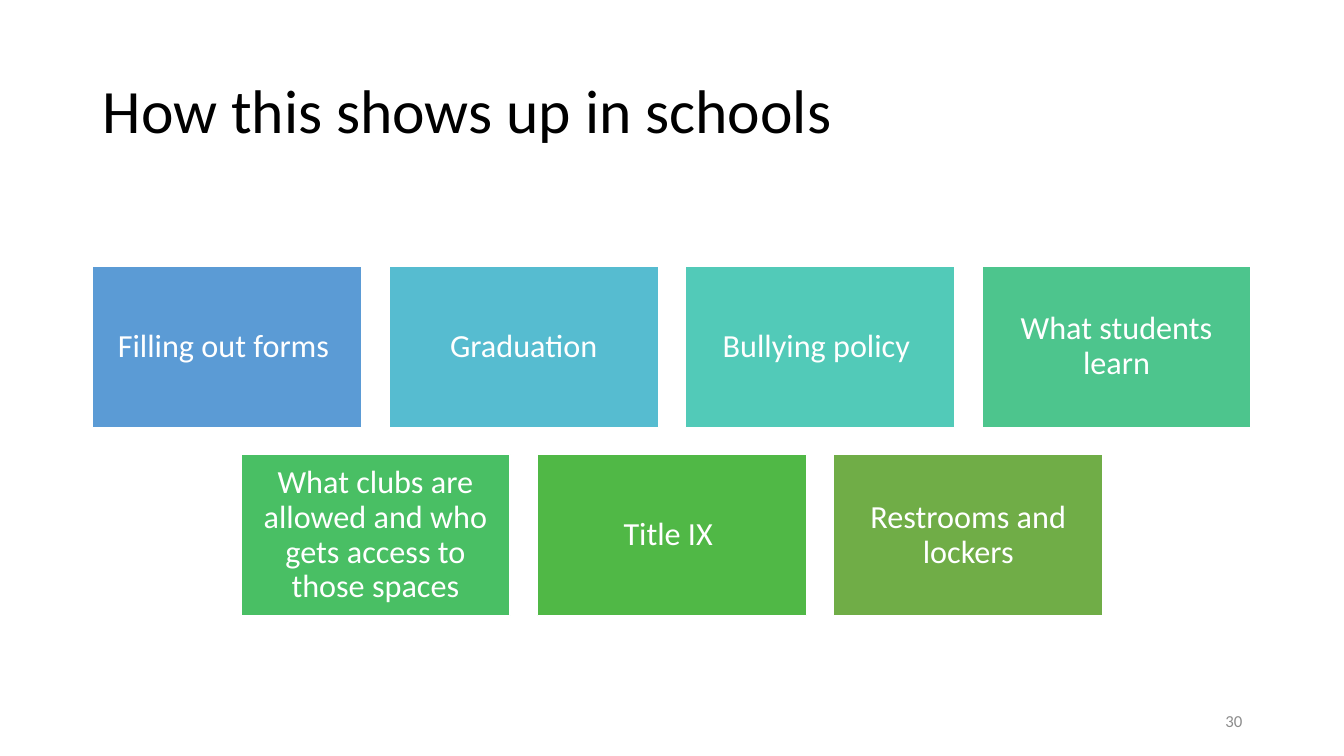
"""Build a slide with seven coloured tiles on where the topic shows up in schools."""
from dataclasses import dataclass

from pptx import Presentation
from pptx.dml.color import RGBColor
from pptx.enum.shapes import MSO_SHAPE
from pptx.enum.text import MSO_ANCHOR, PP_ALIGN
from pptx.util import Pt

RECTANGLE = MSO_SHAPE.RECTANGLE
MIDDLE = MSO_ANCHOR.MIDDLE
LEFT, CENTER, RIGHT = PP_ALIGN.LEFT, PP_ALIGN.CENTER, PP_ALIGN.RIGHT

TITLE = "How this shows up in schools"
PAGE_NUMBER = "30"
TILE_ROWS = [
    [
        ("Filling out forms ", "5B9BD5"),
        ("Graduation", "56BCD0"),
        ("Bullying policy ", "52CAB8"),
        ("What students learn", "4DC58D"),
    ],
    [
        ("What clubs are allowed and who gets access to those spaces", "49BF64"),
        ("Title IX ", "50B846"),
        ("Restrooms and lockers", "70AD47"),
    ],
]


@dataclass(frozen=True)
class Theme:
    font: str = "Calibri"
    title_color: str = "000000"
    tile_text_color: str = "FFFFFF"
    tile_line_color: str = "FFFFFF"
    number_color: str = "8C8C8C"
    title_size: int = 44
    tile_size: int = 23
    number_size: int = 12
    tile_line_width: int = 1
    line_spacing: float = 0.9


THEME = Theme()
EMU_PER_PX = 9144
SLIDE_WIDTH, SLIDE_HEIGHT = 1333, 750
TITLE_BOX = (92, 40, 1150, 145)
NUMBER_BOX = (942, 695, 300, 40)
TILE_WIDTH, TILE_HEIGHT, TILE_GAP = 267, 160, 27
TILES_TOP = 264
TILE_INSET = 10


def emu(*lengths):
    return [round(length * EMU_PER_PX) for length in lengths]


def write_text(shape, text, size, color, alignment, line_spacing=1.0):
    text_frame = shape.text_frame
    text_frame.text = text
    text_frame.word_wrap = True
    text_frame.vertical_anchor = MIDDLE
    paragraph = text_frame.paragraphs[0]
    paragraph.alignment = alignment
    paragraph.line_spacing = line_spacing
    font = paragraph.runs[0].font
    font.name = THEME.font
    font.size = Pt(size)
    font.color.rgb = RGBColor.from_string(color)


def add_tile(slide, left, top, text, color):
    box = emu(left, top, TILE_WIDTH, TILE_HEIGHT)
    tile = slide.shapes.add_shape(RECTANGLE, *box)
    tile.shadow.inherit = False
    tile.fill.solid()
    tile.fill.fore_color.rgb = RGBColor.from_string(color)
    tile.line.color.rgb = RGBColor.from_string(THEME.tile_line_color)
    tile.line.width = Pt(THEME.tile_line_width)
    write_text(tile, text, THEME.tile_size, THEME.tile_text_color, CENTER, THEME.line_spacing)
    text_frame = tile.text_frame
    inset = emu(TILE_INSET)[0]
    text_frame.margin_left = text_frame.margin_right = inset
    text_frame.margin_top = text_frame.margin_bottom = inset


def add_tiles(slide):
    for row_index, row in enumerate(TILE_ROWS):
        row_width = len(row) * (TILE_WIDTH + TILE_GAP) - TILE_GAP
        row_left = (SLIDE_WIDTH - row_width) // 2
        top = TILES_TOP + row_index * (TILE_HEIGHT + TILE_GAP)
        for column, (text, color) in enumerate(row):
            left = row_left + column * (TILE_WIDTH + TILE_GAP)
            add_tile(slide, left, top, text, color)


def main():
    presentation = Presentation()
    presentation.slide_width, presentation.slide_height = emu(SLIDE_WIDTH, SLIDE_HEIGHT)
    slide = presentation.slides.add_slide(presentation.slide_layouts[6])
    title = slide.shapes.add_textbox(*emu(*TITLE_BOX))
    write_text(title, TITLE, THEME.title_size, THEME.title_color, LEFT, THEME.line_spacing)
    add_tiles(slide)
    number = slide.shapes.add_textbox(*emu(*NUMBER_BOX))
    write_text(number, PAGE_NUMBER, THEME.number_size, THEME.number_color, RIGHT)
    presentation.save("out.pptx")


if __name__ == "__main__":
    main()
